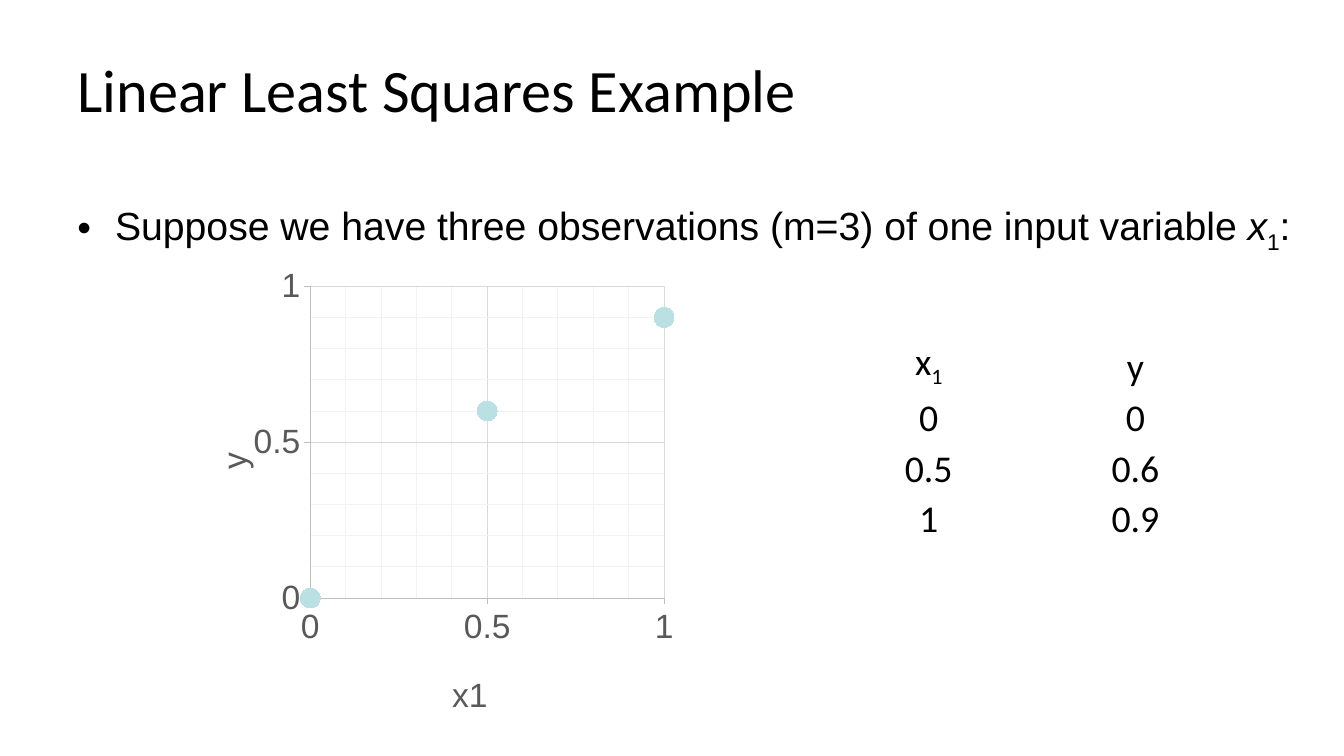
from lxml import etree
from pptx import Presentation
from pptx.chart.data import XyChartData
from pptx.dml.color import RGBColor
from pptx.enum.chart import XL_CHART_TYPE, XL_MARKER_STYLE, XL_TICK_MARK
from pptx.enum.text import MSO_ANCHOR, PP_ALIGN
from pptx.oxml import parse_xml
from pptx.oxml.ns import nsdecls, qn
from pptx.util import Cm, Pt

SCATTER = XL_CHART_TYPE.XY_SCATTER
CIRCLE = XL_MARKER_STYLE.CIRCLE
TICK_OUTSIDE, TICK_NONE = XL_TICK_MARK.OUTSIDE, XL_TICK_MARK.NONE
MIDDLE, BOTTOM = MSO_ANCHOR.MIDDLE, MSO_ANCHOR.BOTTOM
LEFT, CENTER = PP_ALIGN.LEFT, PP_ALIGN.CENTER

TITLE = "Linear Least Squares Example"
STATEMENT = [
    ("Suppose we have three observations (m=3) of one input variable ", ""),
    ("x", "italic"), ("1", "subscript"), (":", ""),
]
HEADERS = [[("x", ""), ("1", "subscript")], [("y", "")]]
OBSERVATIONS = [(0, 0), (0.5, 0.6), (1, 0.9)]
AXIS_TITLES = {"x": ("x1", 0.54, 0.865, 0), "y": ("y", 0.075, 0.4, -90)}
PLOT_AREA = {"x": 0.277, "y": 0.06, "w": 0.686, "h": 0.66}

BLACK, GREY, AXIS_LINE = "000000", "595959", "BFBFBF"
MAJOR_GRID, MINOR_GRID, MARKER = "D9D9D9", "F2F2F2", "BBE0E3"


def color(value):
    return RGBColor.from_string(value)


def write_runs(paragraph, runs, size, font="Arial", fill=BLACK, align=LEFT):
    """Fill a paragraph with (text, style) pairs."""
    paragraph.alignment = align
    for text, style in runs:
        run = paragraph.add_run()
        run.text = text
        run.font.size, run.font.name = Pt(size), font
        run.font.color.rgb = color(fill)
        if style == "italic":
            run.font.italic = True
        elif style == "subscript":
            run.font._element.set("baseline", "-25000")


def set_bullet(paragraph, indent):
    properties = paragraph._p.get_or_add_pPr()
    properties.set("marL", str(indent))
    properties.set("indent", str(-indent))
    etree.SubElement(properties, qn("a:buFont")).set("typeface", "Arial")
    etree.SubElement(properties, qn("a:buChar")).set("char", "•")


def place_in_chart(element, index, inner=False, **fractions):
    """Position a chart part by fractions of the chart size."""
    for layout in element.findall(qn("c:layout")):
        element.remove(layout)
    settings = [("layoutTarget", "inner")] if inner else []
    settings += [("xMode", "edge"), ("yMode", "edge"), *fractions.items()]
    body = "".join(f'<c:{name} val="{value}"/>' for name, value in settings)
    element.insert(index, parse_xml(
        f'<c:layout {nsdecls("c")}><c:manualLayout>{body}</c:manualLayout></c:layout>'))


def set_line(line, value):
    line.color.rgb = color(value)
    line.width = Pt(0.75)


def set_minor_gridlines(axis, value):
    axis.has_minor_gridlines = True
    gridlines = axis._element.find(qn("c:minorGridlines"))
    gridlines.append(parse_xml(
        f'<c:spPr {nsdecls("c", "a")}><a:ln w="{Pt(0.75)}"><a:solidFill>'
        f'<a:srgbClr val="{value}"/></a:solidFill></a:ln></c:spPr>'))


def format_axis(axis, title, x, y, angle):
    axis.minimum_scale, axis.maximum_scale = 0, 1
    axis.major_unit, axis.minor_unit = 0.5, 0.1
    axis.major_tick_mark, axis.minor_tick_mark = TICK_OUTSIDE, TICK_NONE
    axis.has_major_gridlines = True
    set_line(axis.major_gridlines.format.line, MAJOR_GRID)
    set_minor_gridlines(axis, MINOR_GRID)
    set_line(axis.format.line, AXIS_LINE)
    labels = axis.tick_labels
    labels.number_format, labels.number_format_is_linked = "General", False
    labels.font.size, labels.font.name = Pt(24), "Arial"
    labels.font.color.rgb = color(GREY)
    frame = axis.axis_title.text_frame
    write_runs(frame.paragraphs[0], [(title, "")], 24, fill=GREY, align=CENTER)
    frame.paragraphs[0].font.bold = False
    frame._txBody.bodyPr.set("rot", str(angle * 60000))
    frame._txBody.bodyPr.set("vert", "horz")
    place_in_chart(axis.axis_title._element, 1, x=x, y=y)


def add_title(slide):
    title = slide.shapes.title
    title.left, title.top, title.width, title.height = Cm(1.7), Cm(0.64), Cm(31.55), Cm(3.18)
    title.text_frame.vertical_anchor = MIDDLE
    write_runs(title.text_frame.paragraphs[0], [(TITLE, "")], 43, font="Calibri")


def add_statement(slide):
    box = slide.shapes.add_textbox(Cm(1.7), Cm(4.88), Cm(31.83), Cm(1.5))
    box.text_frame.word_wrap = True
    paragraph = box.text_frame.paragraphs[0]
    paragraph.line_spacing = 1.05
    set_bullet(paragraph, Cm(0.95))
    write_runs(paragraph, STATEMENT, 28)


def add_scatter(slide):
    data = XyChartData()
    points = data.add_series("Series 1")
    for x, y in OBSERVATIONS:
        points.add_data_point(x, y)
    chart = slide.shapes.add_chart(
        SCATTER, Cm(4.22), Cm(6.5), Cm(13), Cm(11.91), data).chart
    chart.has_legend = chart.has_title = False
    chart.font.size, chart.font.name = Pt(10), "Arial"
    chart.font.color.rgb = color(BLACK)
    plot = chart.plots[0]
    plot.vary_by_categories = False
    series = plot.series[0]
    series.format.line.fill.background()
    series.marker.style, series.marker.size = CIRCLE, 14
    series.marker.format.fill.solid()
    series.marker.format.fill.fore_color.rgb = color(MARKER)
    series.marker.format.line.color.rgb = color(MARKER)
    format_axis(chart.category_axis, *AXIS_TITLES["x"])
    format_axis(chart.value_axis, *AXIS_TITLES["y"])
    plot_area = chart._chartSpace.find(".//" + qn("c:plotArea"))
    place_in_chart(plot_area, 0, inner=True, **PLOT_AREA)


def add_observations(slide):
    rows = [HEADERS] + [[[(str(value), "")] for value in pair] for pair in OBSERVATIONS]
    table = slide.shapes.add_table(
        len(rows), 2, Cm(20.8), Cm(8.46), Cm(10.42), Cm(1.28 * len(rows))).table
    table.first_row = table.horz_banding = False
    for row_index, row in enumerate(rows):
        for column_index, runs in enumerate(row):
            cell = table.cell(row_index, column_index)
            cell.fill.background()
            cell.vertical_anchor = BOTTOM
            cell.margin_left = cell.margin_right = cell.margin_top = Cm(0.08)
            cell.margin_bottom = 0
            write_runs(cell.text_frame.paragraphs[0], runs, 27,
                       font="Calibri", align=CENTER)


def main():
    presentation = Presentation()
    presentation.slide_width, presentation.slide_height = Cm(33.87), Cm(19.05)
    slide = presentation.slides.add_slide(presentation.slide_layouts[5])
    add_title(slide)
    add_statement(slide)
    add_scatter(slide)
    add_observations(slide)
    presentation.save("out.pptx")


if __name__ == "__main__":
    main()
